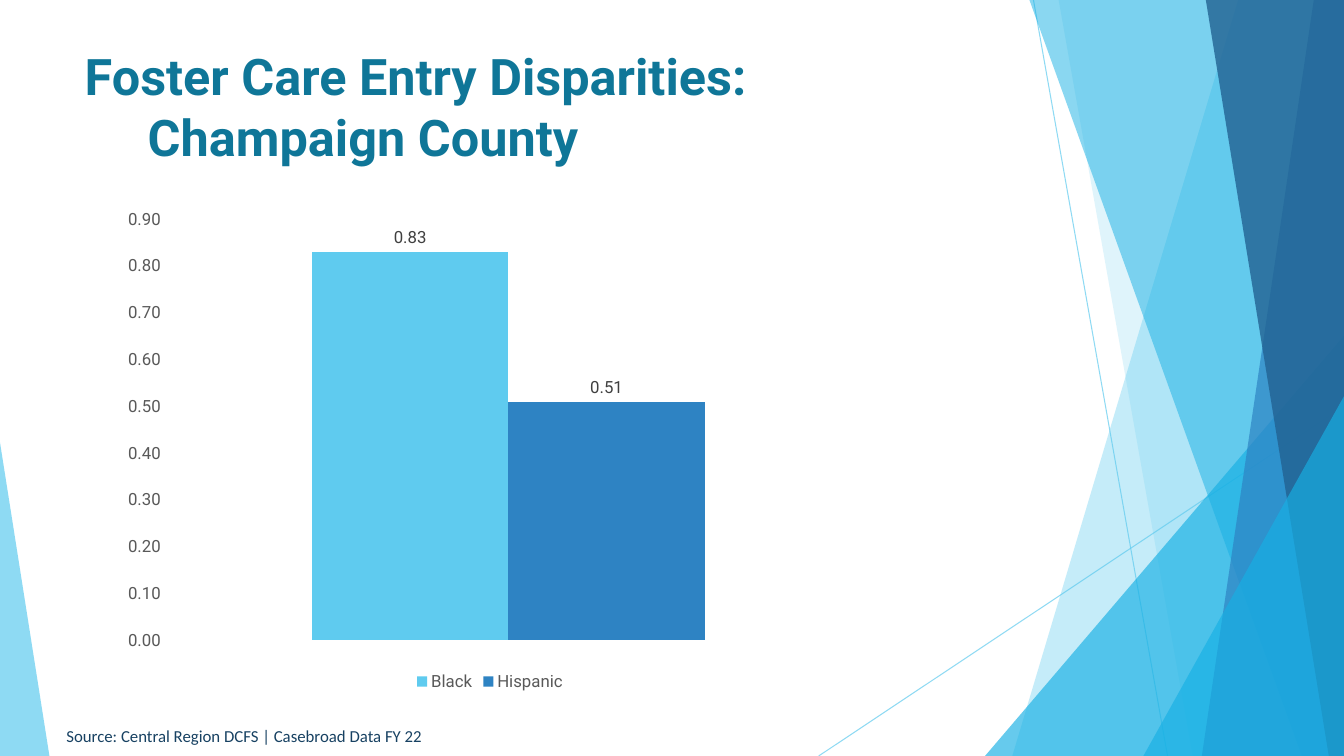
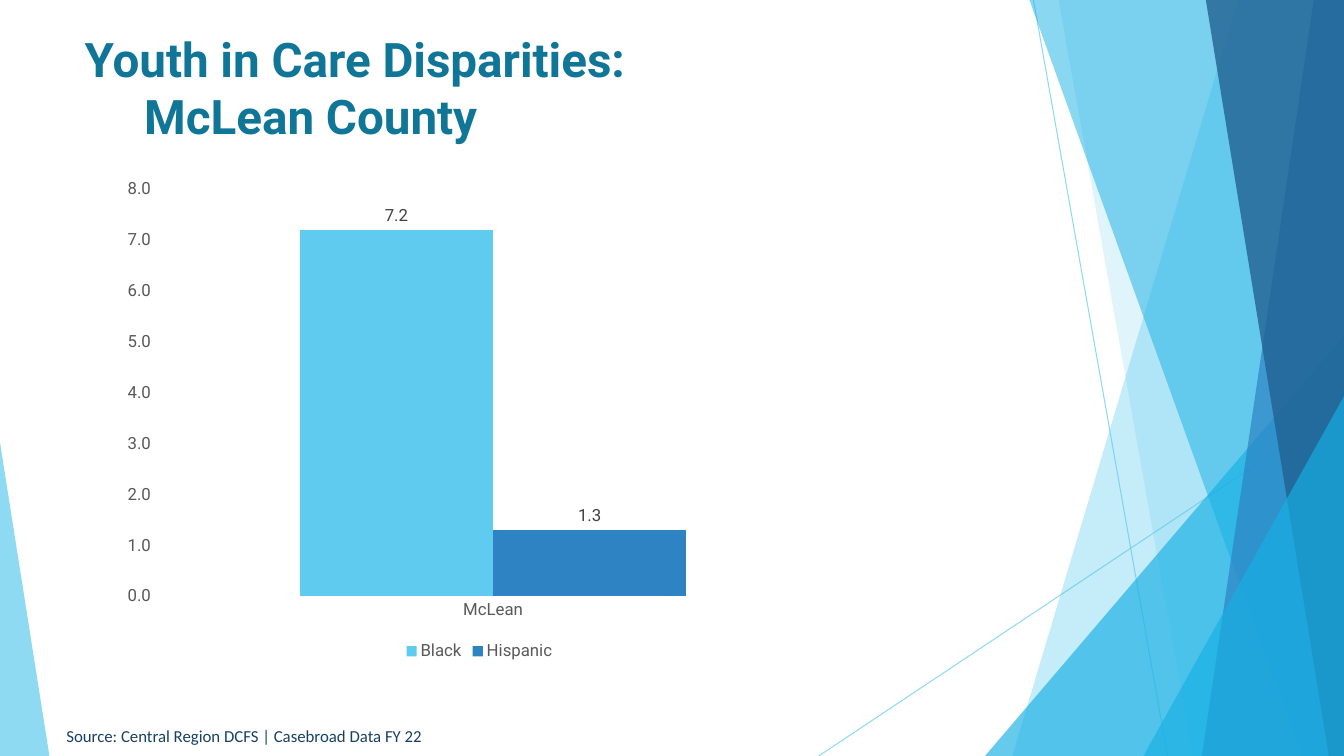
from lxml.etree import SubElement
from pptx import Presentation
from pptx.chart.data import CategoryChartData
from pptx.dml.color import RGBColor
from pptx.enum.chart import XL_CHART_TYPE, XL_LABEL_POSITION, XL_LEGEND_POSITION, XL_TICK_MARK
from pptx.enum.shapes import MSO_CONNECTOR, MSO_SHAPE
from pptx.enum.text import MSO_ANCHOR, MSO_AUTO_SIZE, PP_ALIGN
from pptx.oxml.ns import qn
from pptx.util import Inches, Pt

COLORS = {
    "sky": "5FCBEF",
    "cyan": "17B0E4",
    "blue": "2E83C3",
    "navy": "226292",
    "title": "0F7698",
    "source": "174162",
    "axis": "595959",
    "label": "404040",
}
SLIDE_W, SLIDE_H = 13.33, 7.5
SOURCE = "Source: Central Region DCFS | Casebroad Data FY 22"


def rgb(name):
    return RGBColor.from_string(COLORS[name])


def style_font(font, size=12, color="axis", name="Roboto", bold=False):
    font.name, font.size, font.bold = name, Pt(size), bold
    font.color.rgb = rgb(color)


def put_text(tf, text, indent=0, **fmt):
    for i, line in enumerate(text.split("\n")):
        p = tf.add_paragraph() if i else tf.paragraphs[0]
        p.alignment = PP_ALIGN.LEFT
        if i:
            p._p.get_or_add_pPr().set("marL", str(Pt(indent)))
        r = p.add_run()
        r.text = line
        style_font(r.font, **fmt)


def set_opacity(sp, percent):
    clr = next(sp.element.spPr.iter(qn("a:srgbClr")))
    SubElement(clr, qn("a:alpha"), val=str(percent * 1000))


def paint(sp, color, opacity):
    sp.shadow.inherit = False
    sp.fill.solid()
    sp.fill.fore_color.rgb = rgb(color)
    sp.line.fill.background()
    set_opacity(sp, opacity)


def add_line(s, x1, y1, x2, y2):
    ln = s.shapes.add_connector(MSO_CONNECTOR.STRAIGHT, *map(Inches, (x1, y1, x2, y2)))
    ln.line.color.rgb = rgb("sky")
    ln.line.width = Pt(0.75)
    set_opacity(ln, 70)
    SubElement(ln.element.spPr, qn("a:effectLst"))


def add_band(s, top_x, bottom_x, right, y, h, color, opacity):
    fb = s.shapes.build_freeform(Inches(top_x), Inches(y))
    corners = [(right, y), (right, y + h), (bottom_x, y + h)]
    fb.add_line_segments([(Inches(cx), Inches(cy)) for cx, cy in corners])
    paint(fb.convert_to_shape(), color, opacity)


def add_triangle(s, x, y, w, h, peak, color, opacity):
    sp = s.shapes.add_shape(MSO_SHAPE.ISOSCELES_TRIANGLE, *map(Inches, (x, y, w, h)))
    sp.adjustments[0] = peak
    paint(sp, color, opacity)


def add_facets(s, x, y, w, h):
    def band(top, bottom, color, opacity):
        add_band(s, x + top, x + bottom, x + w, y, h, color, opacity)

    def corner(left, top):
        add_triangle(s, x + left, y + top, w - left, h - top, 1, "cyan", 66)

    add_line(s, x + 2.25, y, x + 3.58, y + h)
    add_line(s, x + w, y + 4.03, x + 0.12, y + h)
    band(4.28, 2.04, "sky", 36)
    band(2.5, 3.83, "sky", 20)
    corner(1.77, 3.33)
    band(2.21, 4.91, "cyan", 50)
    band(5.03, 3.92, "blue", 70)
    band(3.96, 5.18, "navy", 80)
    corner(3.34, 3.93)


def build_layout(layout, s):
    for ph in list(layout.placeholders):
        if ph.placeholder_format.idx >= 10:
            ph.element.getparent().remove(ph.element)
    add_facets(s, 8, 0, SLIDE_W - 8, SLIDE_H)
    add_triangle(s, 0, 4.39, 0.49, SLIDE_H - 4.39, 0, "sky", 70)
    decor = [sp for sp in s.shapes if not sp.is_placeholder]
    for shape_id, sp in enumerate(decor, 100):
        sp.element.xpath(".//p:cNvPr")[0].set("id", str(shape_id))
        layout.element.cSld.spTree.append(sp.element)


def add_title(s, text, x, y, w, h, size):
    sp = s.shapes.title
    sp.left, sp.top, sp.width, sp.height = map(Inches, (x, y, w, h))
    tf = sp.text_frame
    tf.word_wrap = True
    tf.auto_size = MSO_AUTO_SIZE.NONE
    tf.vertical_anchor = MSO_ANCHOR.MIDDLE
    put_text(tf, text, indent=size * 1.25, size=size, color="title", bold=True)


def add_source(s, x, y, w, h):
    tf = s.shapes.add_textbox(*map(Inches, (x, y, w, h))).text_frame
    tf.word_wrap = False
    tf.auto_size = MSO_AUTO_SIZE.SHAPE_TO_FIT_TEXT
    put_text(tf, SOURCE, name="Calibri", color="source")


def style_axis(axis):
    axis.has_major_gridlines = False
    axis.major_tick_mark = axis.minor_tick_mark = XL_TICK_MARK.NONE
    axis.format.line.fill.background()
    style_font(axis.tick_labels.font)


def add_rates_chart(s, x, y, w, h, category, black, hispanic, top, step, fmt, show_category):
    data = CategoryChartData(number_format=fmt)
    data.categories = [category]
    data.add_series("Black", [black])
    data.add_series("Hispanic", [hispanic])
    box = map(Inches, (x, y, w, h))
    chart = s.shapes.add_chart(XL_CHART_TYPE.COLUMN_CLUSTERED, *box, data).chart
    style_font(chart.font)
    chart.has_title = False
    chart.has_legend = True
    chart.legend.position = XL_LEGEND_POSITION.BOTTOM
    chart.legend.include_in_layout = False
    style_font(chart.legend.font)

    style_axis(chart.category_axis)
    chart.category_axis.visible = show_category
    axis = chart.value_axis
    style_axis(axis)
    axis.minimum_scale, axis.maximum_scale, axis.major_unit = 0, top, step
    axis.tick_labels.number_format = fmt
    axis.tick_labels.number_format_is_linked = False

    plot = chart.plots[0]
    plot.gap_width, plot.overlap, plot.vary_by_categories = 150, 0, False
    for ser, color in zip(plot.series, ("sky", "blue")):
        ser.format.fill.solid()
        ser.format.fill.fore_color.rgb = rgb(color)
        labels = ser.data_labels
        labels.show_value = True
        labels.position = XL_LABEL_POSITION.OUTSIDE_END
        labels.number_format = fmt
        labels.number_format_is_linked = False
        style_font(labels.font, color="label")


def build_slide(s, title, title_box, title_size, chart_box, **rates):
    add_title(s, title, *title_box, size=title_size)
    add_rates_chart(s, *chart_box, **rates)
    add_source(s, 0.56, 7.15, 3.76, 0.3)


def main():
    prs = Presentation()
    prs.slide_width, prs.slide_height = Inches(SLIDE_W), Inches(SLIDE_H)
    layout = prs.slide_layouts[5]

    entry = prs.slides.add_slide(layout)
    build_layout(layout, entry)
    build_slide(entry, "Foster Care Entry Disparities:\nChampaign County",
                (0.74, 0.33, 9.4, 1.44), 36, (1.12, 1.98, 7.48, 4.92),
                category="1", black=0.83, hispanic=0.51,
                top=0.9, step=0.1, fmt="0.00", show_category=False)

    in_care = prs.slides.add_slide(layout)
    build_slide(in_care, "Youth in Care Disparities:\nMcLean County",
                (0.74, 0.32, 9.4, 1.09), 34, (1.12, 1.68, 7.27, 4.92),
                category="McLean", black=7.2, hispanic=1.3,
                top=8, step=1, fmt="0.0", show_category=True)

    prs.save("out.pptx")


if __name__ == "__main__":
    main()
